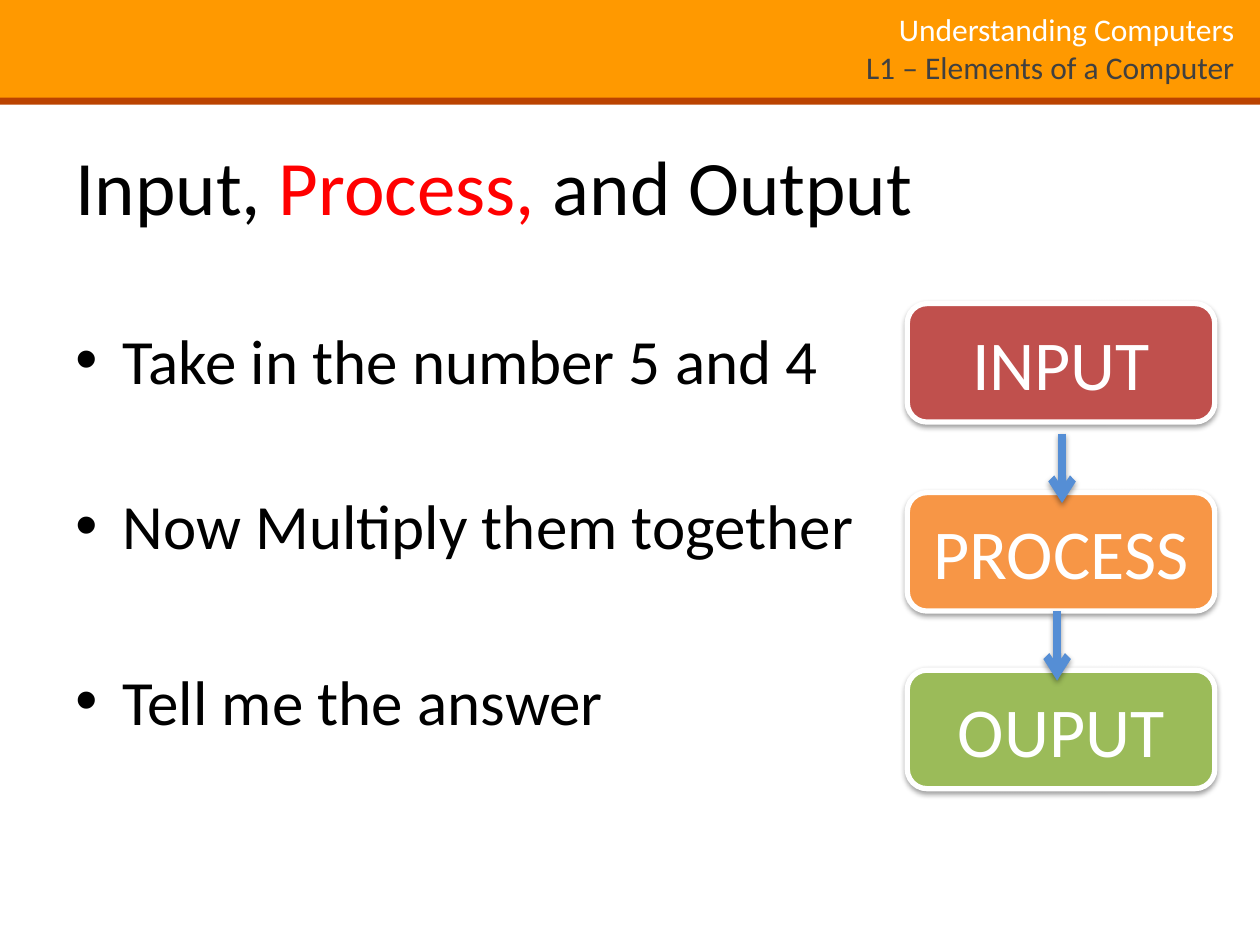
import dataclasses

import lxml.etree
import pptx
import pptx.dml.color
import pptx.enum.shapes
import pptx.enum.text
import pptx.oxml
import pptx.oxml.ns
import pptx.util

Cm = pptx.util.Cm
Pt = pptx.util.Pt
SHAPE = pptx.enum.shapes.MSO_SHAPE
ALIGN = pptx.enum.text.PP_ALIGN
ANCHOR = pptx.enum.text.MSO_ANCHOR


@dataclasses.dataclass(frozen=True)
class Theme:
    """Colours, font and type sizes of the slide."""
    font: str = "Calibri"
    band: str = "FF9900"
    strip: str = "BB4301"
    white: str = "FFFFFF"
    black: str = "000000"
    grey: str = "404040"
    accent: str = "FF0000"
    arrow: str = "558ED5"
    input: str = "C0504D"
    process: str = "F79646"
    output: str = "9BBB59"
    header_size: int = 18
    title_size: int = 44
    body_size: int = 36
    step_size: int = 40


THEME = Theme()


def rgb(color):
    """Return the colour object for a hex string."""
    return pptx.dml.color.RGBColor.from_string(color)


def add_run(p, text, *, size, color=THEME.black):
    """Append a formatted run to a paragraph."""
    r = p.add_run()
    r.text = text
    r.font.name = THEME.font
    r.font.size = Pt(size)
    r.font.color.rgb = rgb(color)


def prepare_frame(sp, anchor=ANCHOR.TOP):
    """Set wrapping and anchoring of a shape and return its text frame."""
    tf = sp.text_frame
    tf.word_wrap = True
    tf.auto_size = pptx.enum.text.MSO_AUTO_SIZE.NONE
    tf.vertical_anchor = anchor
    return tf


def add_shadow(sp):
    """Give a shape or connector a soft shadow below it."""
    ns = pptx.oxml.ns.nsdecls("a")
    sp._element.spPr.append(pptx.oxml.parse_xml(
        f'<a:effectLst {ns}><a:outerShdw blurRad="40000" dist="20000" '
        f'dir="5400000" rotWithShape="0"><a:srgbClr val="{THEME.black}">'
        '<a:alpha val="38000"/></a:srgbClr></a:outerShdw></a:effectLst>'))


def add_band(s, top, height, color):
    """Add a full-width band without outline."""
    sp = s.shapes.add_shape(SHAPE.RECTANGLE, Cm(-0.1), Cm(top), Cm(25.55), Cm(height))
    sp.fill.solid()
    sp.fill.fore_color.rgb = rgb(color)
    sp.line.fill.background()
    sp.shadow.inherit = False


def add_header(s):
    """Add the header bands and the course and lesson names."""
    add_band(s, 1.96, 0.15, THEME.strip)
    add_band(s, -0.03, 2, THEME.band)
    sp = s.shapes.add_textbox(Cm(12.67), Cm(0.08), Cm(12.47), Cm(1.75))
    p = prepare_frame(sp).paragraphs[0]
    p.alignment = ALIGN.RIGHT
    add_run(p, "Understanding Computers", size=THEME.header_size, color=THEME.white)
    p.add_line_break()
    add_run(p, "L1 – Elements of a Computer", size=THEME.header_size, color=THEME.grey)


def add_title(s, parts):
    """Place the title and fill it with coloured parts."""
    sp = s.shapes.title
    sp.left, sp.top, sp.width, sp.height = Cm(1.27), Cm(2.67), Cm(22.86), Cm(3.18)
    p = prepare_frame(sp).paragraphs[0]
    p.alignment = ALIGN.LEFT
    for text, color in parts:
        add_run(p, text, size=THEME.title_size, color=color)


def add_bullets(s, items):
    """Add a bulleted list of (text, space before) items."""
    sp = s.shapes.add_textbox(Cm(1.27), Cm(6.35), Cm(22.86), Cm(11.58))
    tf = prepare_frame(sp)
    for i, (text, space) in enumerate(items):
        p = tf.add_paragraph() if i else tf.paragraphs[0]
        p.space_before = Pt(space)
        pPr = p._p.get_or_add_pPr()
        pPr.set("marL", str(Cm(0.95)))
        pPr.set("indent", str(Cm(-0.95)))
        for tag, attr, value in (("a:buFont", "typeface", "Arial"), ("a:buChar", "char", "•")):
            lxml.etree.SubElement(pPr, pptx.oxml.ns.qn(tag)).set(attr, value)
        add_run(p, text, size=THEME.body_size)


def add_step(s, text, top, color):
    """Add one rounded step of the flow."""
    sp = s.shapes.add_shape(
        SHAPE.FLOWCHART_ALTERNATE_PROCESS, Cm(18.29), Cm(top), Cm(6.2), Cm(2.39))
    sp.fill.solid()
    sp.fill.fore_color.rgb = rgb(color)
    sp.line.color.rgb = rgb(THEME.white)
    sp.line.width = Pt(3)
    add_shadow(sp)
    p = prepare_frame(sp, ANCHOR.MIDDLE).paragraphs[0]
    p.alignment = ALIGN.CENTER
    add_run(p, text, size=THEME.step_size, color=THEME.white)


def add_arrow(s, x, top):
    """Add a downward arrow between two steps."""
    sp = s.shapes.add_connector(
        pptx.enum.shapes.MSO_CONNECTOR.STRAIGHT, Cm(x), Cm(top), Cm(x), Cm(top + 1.4))
    sp.line.color.rgb = rgb(THEME.arrow)
    sp.line.width = Pt(4.5)
    ln = sp.line._get_or_add_ln()
    lxml.etree.SubElement(ln, pptx.oxml.ns.qn("a:tailEnd")).set("type", "arrow")
    add_shadow(sp)


def main():
    """Build the slide and save it."""
    prs = pptx.Presentation()
    prs.slide_width, prs.slide_height = Cm(25.4), Cm(19.05)
    s = prs.slides.add_slide(prs.slide_layouts[5])
    add_header(s)
    add_title(s, [("Input, ", THEME.black), ("Process, ", THEME.accent),
                  ("and Output", THEME.black)])
    add_bullets(s, [("Take in the number 5 and 4", 0),
                    ("Now Multiply them together", 51.5),
                    ("Tell me the answer", 57)])
    for text, top, color in (("INPUT", 6.12, THEME.input),
                             ("PROCESS", 9.93, THEME.process),
                             ("OUPUT", 13.51, THEME.output)):
        add_step(s, text, top, color)
    for x, top in ((21.41, 8.74), (21.31, 12.32)):
        add_arrow(s, x, top)
    prs.save("out.pptx")


if __name__ == "__main__":
    main()
